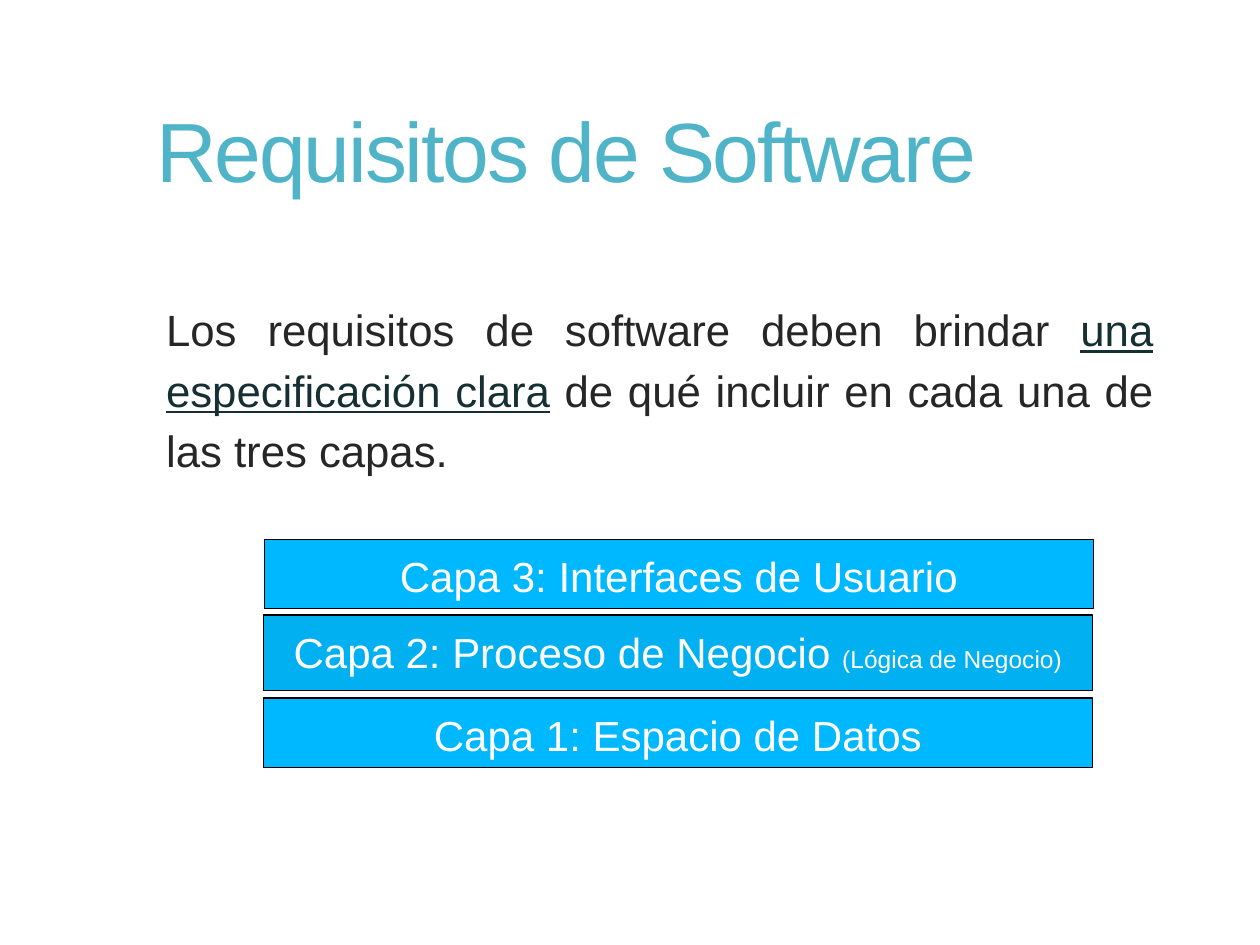
from pptx import Presentation
from pptx import util as u
from pptx.dml.color import RGBColor
from pptx.enum import shapes, text

COLORS = {"title": "50B4C8", "body": "262626", "accent": "162F33", "white": "FFFFFF",
          "layer": "00B8FF", "middle": "00B0F0", "border": "000000"}

HEADING = [("Requisitos de Software", {})]
STATEMENT = [
    ("Los requisitos de software deben brindar ", {}),
    ("una especificación clara", {"color": "accent", "underline": True}),
    (" de qué incluir en cada una de las tres capas.", {}),
]
LAYERS = [
    ([("Capa 3: Interfaces de Usuario", {})], 5.33, 10.87, 1.4, "layer"),
    ([("Capa 2: Proceso de Negocio ", {}), ("(Lógica de Negocio)", {"size": 14})],
     5.31, 12.4, 1.52, "middle"),
    ([("Capa 1: Espacio de Datos", {})], 5.31, 14.07, 1.4, "layer"),
]
LAYER_WIDTH = 16.71


def write(frame, pieces, *, size, color, align=text.PP_ALIGN.LEFT,
          anchor=text.MSO_ANCHOR.TOP, line_spacing=1.0, tracking=0, top_inset=0.13):
    frame.word_wrap = True
    frame.vertical_anchor = anchor
    frame.margin_top = u.Cm(top_inset)
    paragraph = frame.paragraphs[0]
    paragraph.alignment = align
    paragraph.line_spacing = line_spacing
    for words, changes in pieces:
        run = paragraph.add_run()
        run.text = words
        run.font.name = "Arial"
        run.font.size = u.Pt(changes.get("size", size))
        run.font.color.rgb = RGBColor.from_string(COLORS[changes.get("color", color)])
        if changes.get("underline"):
            run.font.underline = True
        if tracking:
            run.font._element.set("spc", str(tracking))


deck = Presentation()
deck.slide_width, deck.slide_height = u.Cm(25.4), u.Cm(19.05)
slide = deck.slides.add_slide(deck.slide_layouts[6])

heading = slide.shapes.add_textbox(u.Cm(2.9), u.Cm(0.91), u.Cm(21.59), u.Cm(4.19))
write(heading.text_frame, HEADING, size=48, color="title",
      anchor=text.MSO_ANCHOR.MIDDLE, tracking=-120)

statement = slide.shapes.add_textbox(u.Cm(3.1), u.Cm(5.82), u.Cm(20.4), u.Cm(4.06))
write(statement.text_frame, STATEMENT, size=25, color="body",
      align=text.PP_ALIGN.JUSTIFY, line_spacing=1.15)

for label, left, top, height, fill in LAYERS:
    layer = slide.shapes.add_shape(shapes.MSO_SHAPE.RECTANGLE, u.Cm(left), u.Cm(top),
                                   u.Cm(LAYER_WIDTH), u.Cm(height))
    layer.shadow.inherit = False
    layer.fill.solid()
    layer.fill.fore_color.rgb = RGBColor.from_string(COLORS[fill])
    layer.line.color.rgb = RGBColor.from_string(COLORS["border"])
    layer.line.width = u.Pt(0.75)
    write(layer.text_frame, label, size=24, color="white",
          align=text.PP_ALIGN.CENTER, top_inset=0.23)

deck.save("out.pptx")
